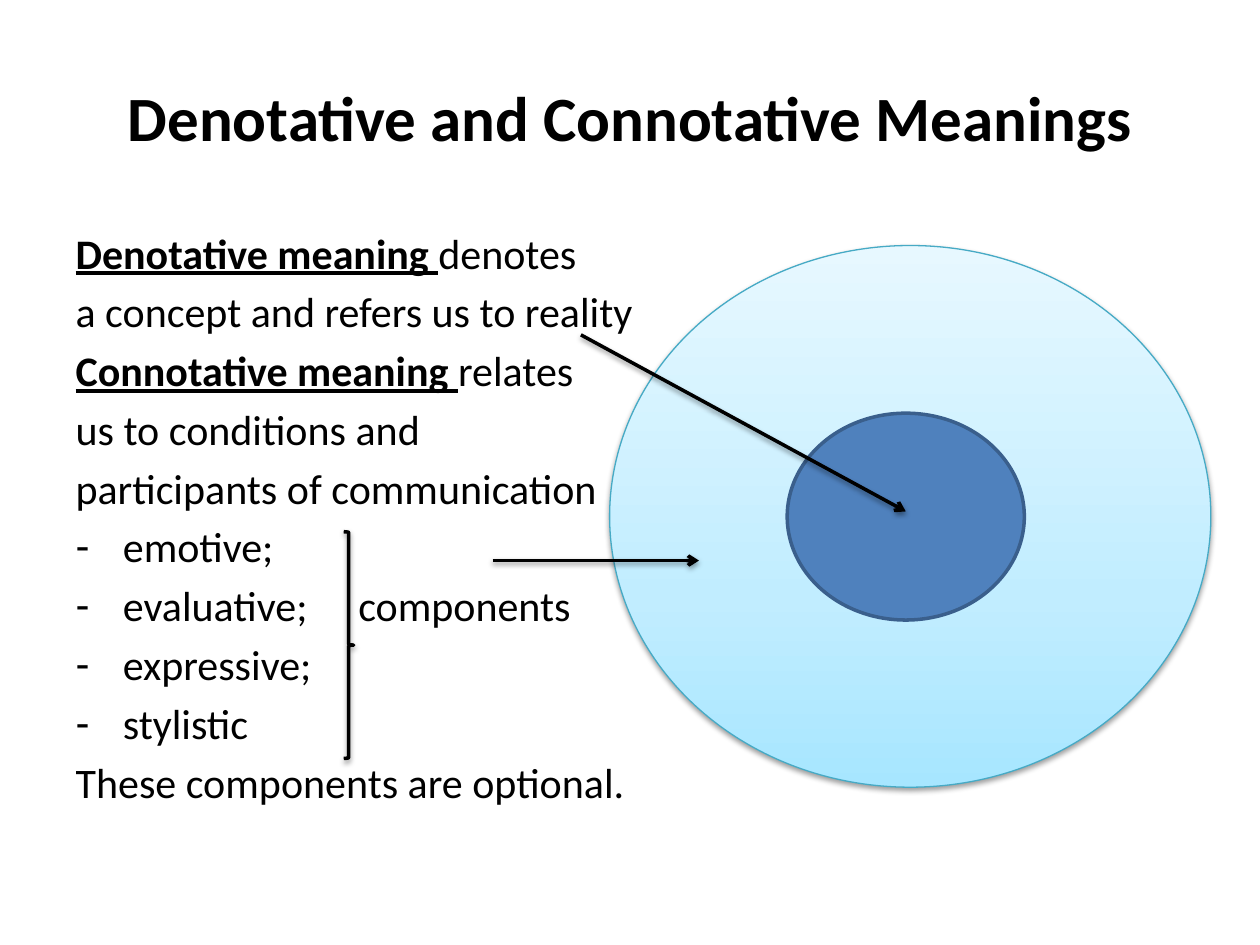
from copy import deepcopy

from lxml.etree import SubElement
from pptx import Presentation
from pptx.dml.color import RGBColor
from pptx.enum.shapes import MSO_CONNECTOR, MSO_SHAPE
from pptx.enum.text import MSO_ANCHOR, PP_ALIGN
from pptx.oxml.ns import qn
from pptx.util import Cm, Pt

BLACK = RGBColor(0x00, 0x00, 0x00)
CORE_FILL = RGBColor(0x4F, 0x81, 0xBD)
CORE_LINE = RGBColor(0x3A, 0x5F, 0x8C)
FIELD_LINE = RGBColor(0x46, 0xAA, 0xC5)
FIELD_STOPS = [
    (0, RGBColor(0xA7, 0xE6, 0xFF)),
    (0.35, RGBColor(0xC1, 0xED, 0xFF)),
    (1, RGBColor(0xE7, 0xF8, 0xFF)),
]
FONT = "Calibri"

# Each line: bullet flag, then runs of (text, is a key term)
DEFINITIONS = [
    (False, [("Denotative meaning ", True), ("denotes", False)]),
    (False, [("a concept and refers us to reality", False)]),
    (False, [("Connotative meaning ", True), ("relates", False)]),
    (False, [("us to conditions and", False)]),
    (False, [("participants of communication", False)]),
    (True, [("emotive;", False)]),
    (True, [("evaluative;\tcomponents", False)]),
    (True, [("expressive;", False)]),
    (True, [("stylistic", False)]),
    (False, [("These components are optional.", False)]),
]


def place(part, box):
    part.left, part.top, part.width, part.height = (Cm(v) for v in box)


def add_run(paragraph, text, size, bold=False, underline=False):
    run = paragraph.add_run()
    run.text = text
    font = run.font
    font.name, font.size = FONT, Pt(size)
    font.bold, font.underline = bold, underline
    font.color.rgb = BLACK


def set_line(part, color, width):
    part.line.color.rgb = color
    part.line.width = Pt(width)


def add_shadow(part):
    properties = part._element.spPr
    effects = properties.find(qn("a:effectLst"))
    if effects is None:
        effects = SubElement(properties, qn("a:effectLst"))
    shadow = SubElement(effects, qn("a:outerShdw"), blurRad=str(Pt(3.1)),
                        dist=str(Pt(1.6)), dir="5400000", rotWithShape="0")
    color = SubElement(shadow, qn("a:srgbClr"), val=str(BLACK))
    SubElement(color, qn("a:alpha"), val="38000")


def add_outline(slide, preset, box, color, width):
    outline = slide.shapes.add_shape(preset, *(Cm(v) for v in box))
    outline.shadow.inherit = False
    set_line(outline, color, width)
    return outline


def add_arrow(slide, start, end):
    arrow = slide.shapes.add_connector(
        MSO_CONNECTOR.STRAIGHT, *(Cm(v) for v in start + end))
    set_line(arrow, BLACK, 2)
    SubElement(arrow.line._get_or_add_ln(), qn("a:tailEnd"), type="arrow")
    add_shadow(arrow)


def fill_field(field):
    field.fill.gradient()
    field.fill.gradient_angle = 90
    stop_list = field._element.spPr.find(
        qn("a:gradFill")).find(qn("a:gsLst"))
    stop_list.insert(1, deepcopy(stop_list[0]))
    for stop, (position, color) in zip(field.fill.gradient_stops, FIELD_STOPS):
        stop.position = position
        stop.color.rgb = color


def build_title(slide, box):
    title = slide.shapes.title
    place(title, box)
    title.text_frame.vertical_anchor = MSO_ANCHOR.MIDDLE
    heading = title.text_frame.paragraphs[0]
    heading.alignment = PP_ALIGN.CENTER
    add_run(heading, "Denotative and Connotative Meanings", 36, bold=True)


def build_definitions(slide, box):
    body = slide.placeholders[1]
    place(body, box)
    frame = body.text_frame
    for index, (bulleted, runs) in enumerate(DEFINITIONS):
        line = frame.add_paragraph() if index else frame.paragraphs[0]
        properties = line._p.get_or_add_pPr()
        if bulleted:
            SubElement(properties, qn("a:buChar"), char="-")
            tabs = SubElement(properties, qn("a:tabLst"))
            SubElement(tabs, qn("a:tab"), pos=str(Cm(5.7)), algn="l")
        else:
            SubElement(properties, qn("a:buNone"))
        for text, is_term in runs:
            add_run(line, text, 24, bold=is_term, underline=is_term)


def build_meaning_diagram(slide, box):
    left, top, width, height = box

    # Connotative field around the denotative core
    field = add_outline(slide, MSO_SHAPE.OVAL, box, FIELD_LINE, 0.75)
    fill_field(field)
    add_shadow(field)
    core_box = (left + 3.58, top + 3.38, 4.78, 4.17)
    core = add_outline(slide, MSO_SHAPE.OVAL, core_box, CORE_LINE, 2)
    core.fill.solid()
    core.fill.fore_color.rgb = CORE_FILL

    # Arrows from the definitions into the diagram
    add_arrow(slide, (left - 2.36, top + 6.35), (left + 1.8, top + 6.35))
    add_arrow(slide, (left - 0.58, top + 1.8), (left + 5.97, top + 5.36))


def build_component_brace(slide, box):
    brace = add_outline(slide, MSO_SHAPE.RIGHT_BRACE, box, BLACK, 2)
    brace.fill.background()
    add_shadow(brace)


def main():
    deck = Presentation()
    deck.slide_width, deck.slide_height = Cm(25.4), Cm(19.05)
    slide = deck.slides.add_slide(deck.slide_layouts[1])
    build_title(slide, (1.27, 0.76, 22.86, 3.18))
    build_definitions(slide, (1.27, 4.45, 22.86, 12.57))
    build_meaning_diagram(slide, (12.29, 4.95, 12.12, 10.92))
    build_component_brace(slide, (6.93, 10.72, 0.2, 4.57))
    deck.save("out.pptx")


if __name__ == "__main__":
    main()
